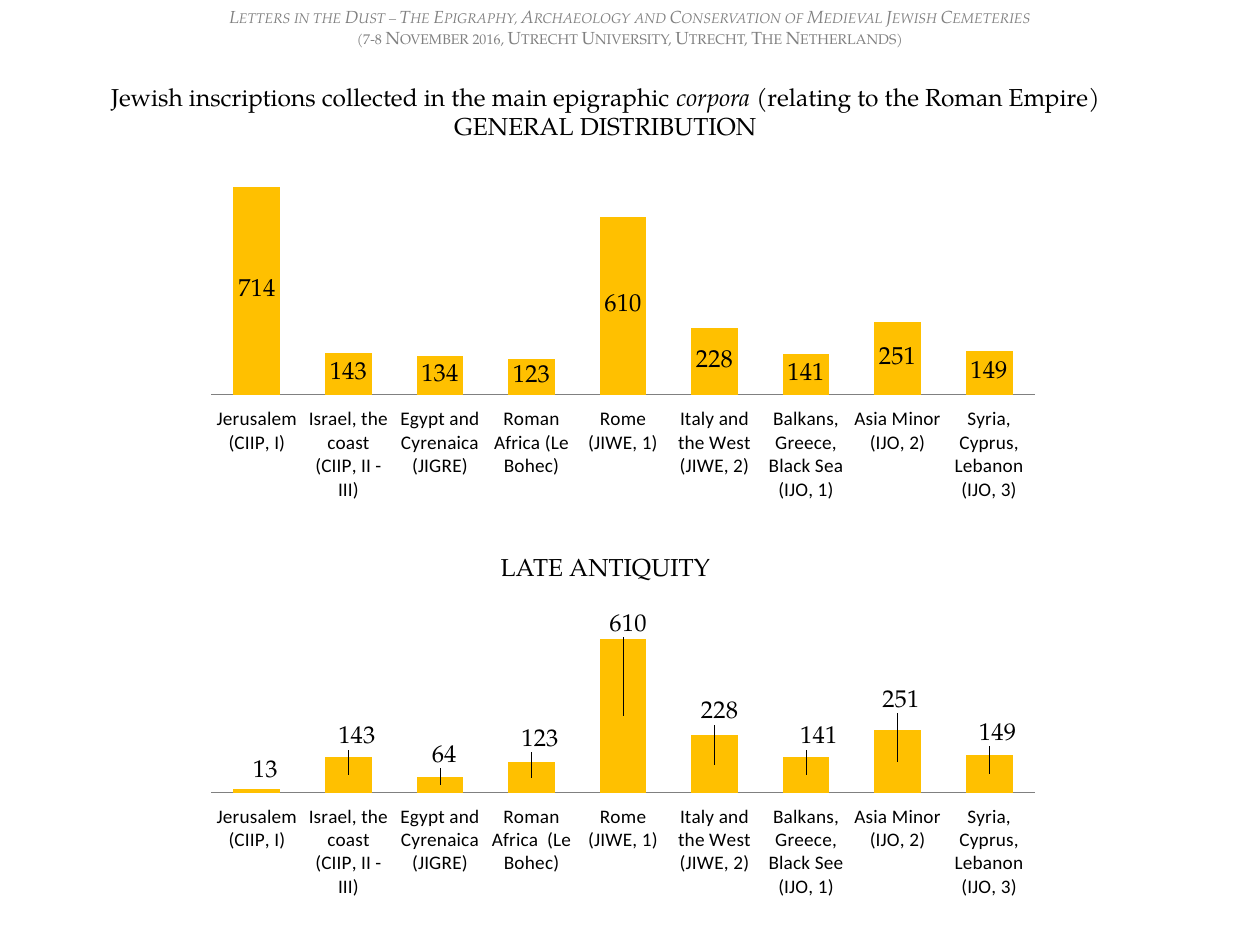
from lxml import etree
from pptx import Presentation
from pptx.chart.data import CategoryChartData
from pptx.dml.color import RGBColor
from pptx.enum.chart import XL_CHART_TYPE as ChartType, XL_LABEL_POSITION as LabelPosition
from pptx.enum.chart import XL_TICK_LABEL_POSITION as TickLabelPosition, XL_TICK_MARK as TickMark
from pptx.enum.text import PP_ALIGN as Align
from pptx.oxml.ns import qn
from pptx.util import Inches, Pt

BLACK = RGBColor(0, 0, 0)
GRAY = RGBColor(0x80, 0x80, 0x80)
GOLD = RGBColor(0xFF, 0xC0, 0x00)
SERIF = "TeX Gyre Pagella"
SANS = "Calibri"


def add_layout(parent, position, **values):
    layout = etree.Element(qn("c:layout"))
    manual = etree.SubElement(layout, qn("c:manualLayout"))
    for name, value in values.items():
        etree.SubElement(manual, qn(f"c:{name}")).set("val", str(value))
    parent.insert(position, layout)


def add_text(left, top, width, height, lines, size, color, wrap):
    frame = slide.shapes.add_textbox(Inches(left), Inches(top), Inches(width), Inches(height)).text_frame
    frame.word_wrap = wrap
    for index, runs in enumerate(lines):
        paragraph = frame.paragraphs[0] if index == 0 else frame.add_paragraph()
        paragraph.alignment = Align.CENTER
        paragraph.font.size = Pt(size)
        paragraph.font.name = SERIF
        paragraph.font.color.rgb = color
        for text, italic in runs:
            run = paragraph.add_run()
            run.text = text
            run.font.italic = italic
    return frame


presentation = Presentation()
presentation.slide_width = Inches(10)
presentation.slide_height = Inches(7.5)
slide = presentation.slides.add_slide(presentation.slide_layouts[6])

header = add_text(0, 0, 10, 0.44, [
    [("Letters in the Dust – The Epigraphy, Archaeology and Conservation of Medieval Jewish Cemeteries", True)],
    [("(7-8 November 2016, Utrecht University, Utrecht, The Netherlands)", False)],
], 10, GRAY, True)
for paragraph in header.paragraphs:
    for run in paragraph.runs:
        run.font._element.set("cap", "small")

add_text(0.76, 0.6, 8.09, 0.57, [
    [("Jewish inscriptions collected in the main epigraphic ", False), ("corpora ", True),
     ("(relating to the Roman Empire", False), (")", True)],
    [("GENERAL DISTRIBUTION", False)],
], 14, BLACK, False)
add_text(0.76, 4.33, 8.09, 0.34, [[("LATE ANTIQUITY", False)]], 14, BLACK, False)

general_categories = [
    "Jerusalem (CIIP, I)", "Israel, the coast (CIIP, II - III)", "Egypt and Cyrenaica (JIGRE)",
    "Roman Africa (Le Bohec)", "Rome (JIWE, 1)", "Italy and the West (JIWE, 2)",
    "Balkans, Greece, Black Sea (IJO, 1)", "Asia Minor (IJO, 2)", "Syria, Cyprus, Lebanon (IJO, 3)",
]
late_categories = list(general_categories)
late_categories[3] = "Roman Africa  (Le Bohec)"
late_categories[6] = "Balkans, Greece, Black See (IJO, 1)"
late_label_offsets = [
    (0.01, -0.07), (0.01, -0.13), (0.005, -0.1), (0.01, -0.13), (0.006, -0.32),
    (0.006, -0.18), (0.015, -0.13), (0.004, -0.21), (0.01, -0.14),
]
charts = [
    (1.23, 2.76, 800, 0.67, general_categories, [714, 143, 134, 123, 610, 228, 141, 251, 149], []),
    (4.85, 2.28, 700, 0.62, late_categories, [13, 143, 64, 123, 610, 228, 141, 251, 149], late_label_offsets),
]

for top, height, maximum, plot_height, categories, values, label_offsets in charts:
    data = CategoryChartData()
    data.categories = categories
    data.add_series("Series 1", values)
    chart = slide.shapes.add_chart(
        ChartType.COLUMN_STACKED, Inches(1.54), Inches(top), Inches(6.81), Inches(height), data).chart
    chart.has_legend = False
    chart.has_title = False
    chart.font.size = Pt(10)
    chart.font.name = SANS
    chart.font.color.rgb = BLACK

    value_axis = chart.value_axis
    value_axis.minimum_scale = 0
    value_axis.maximum_scale = maximum
    value_axis.has_major_gridlines = False
    value_axis.visible = False
    category_axis = chart.category_axis
    category_axis.major_tick_mark = TickMark.NONE
    category_axis.tick_label_position = TickLabelPosition.LOW
    category_axis.tick_labels.font.size = Pt(11)
    category_axis.tick_labels.font.color.rgb = BLACK
    category_axis.format.line.color.rgb = GRAY
    category_axis.format.line.width = Pt(0.75)

    plot = chart.plots[0]
    plot.gap_width = 95
    plot.overlap = 100
    plot.vary_by_categories = False
    series = plot.series[0]
    series.format.fill.solid()
    series.format.fill.fore_color.rgb = GOLD

    labels = series.data_labels
    labels.show_value = True
    point_labels = [series.points[index].data_label for index in range(len(label_offsets))]
    for label in [labels, *point_labels]:
        label.position = LabelPosition.CENTER
        label.font.size = Pt(14)
        label.font.name = SERIF
        label.font.color.rgb = BLACK
    for element, (x, y) in zip(series._element.findall(".//" + qn("c:dLbl")), label_offsets):
        add_layout(element, 1, x=x, y=y)

    plot_area = chart._chartSpace.chart.plotArea
    for layout in plot_area.findall(qn("c:layout")):
        plot_area.remove(layout)
    add_layout(plot_area, 0, layoutTarget="inner", xMode="edge", yMode="edge",
               x=0.02, y=0.02, w=0.96, h=plot_height)

presentation.save("out.pptx")
